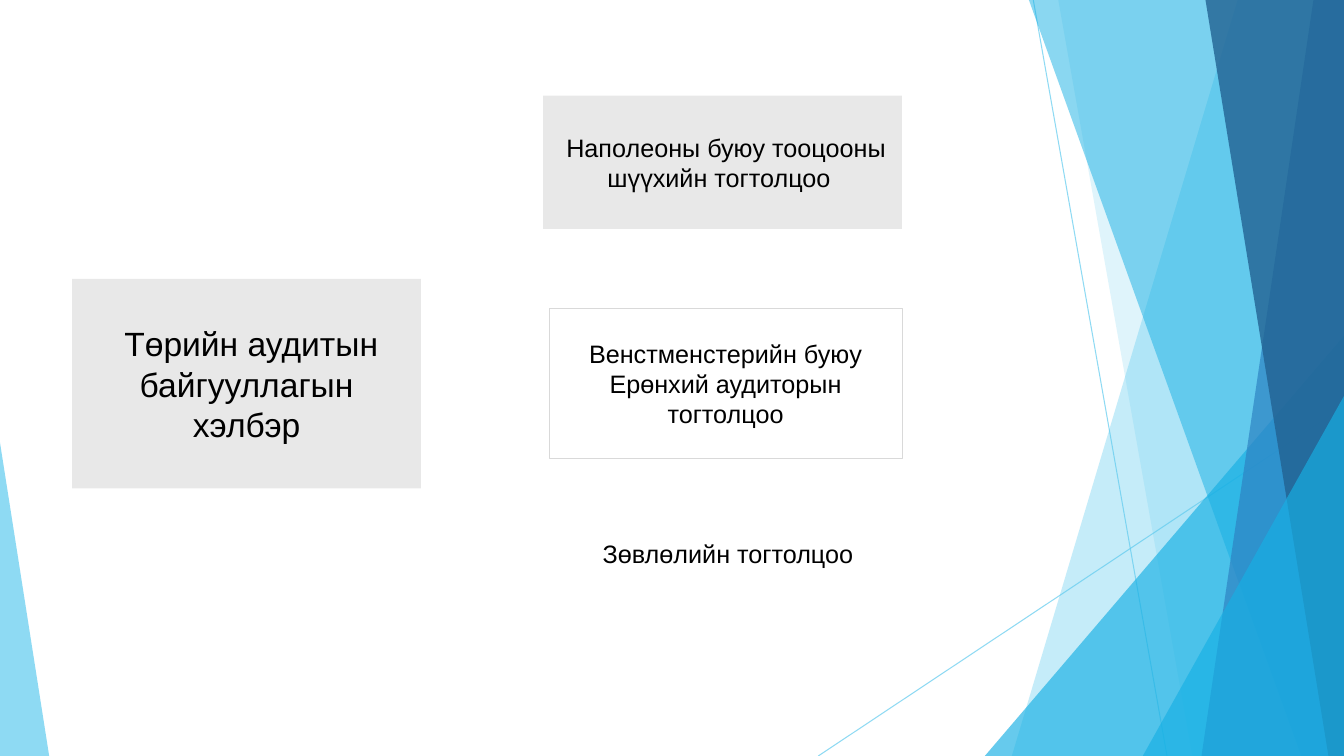
from lxml import etree
from pptx import Presentation
from pptx.dml.color import RGBColor
from pptx.enum import shapes, text
from pptx.oxml import ns
from pptx.util import Cm, Pt

SKY = RGBColor(0x5F, 0xCB, 0xEF)
CYAN = RGBColor(0x17, 0xB0, 0xE4)
BLUE = RGBColor(0x2E, 0x83, 0xC3)
NAVY = RGBColor(0x22, 0x62, 0x92)
GREY = RGBColor(0xD9, 0xD9, 0xD9)
WHITE = RGBColor(0xFF, 0xFF, 0xFF)
BLACK = RGBColor(0, 0, 0)
WIDTH, HEIGHT = 33.87, 19.05


def set_opacity(shape, percent):
    """Make the only solid colour of a shape or line partly transparent."""
    colour = shape._element.spPr.find(".//" + ns.qn("a:srgbClr"))
    etree.SubElement(colour, ns.qn("a:alpha")).set("val", str(percent * 1000))


def style_text(frame, words, size, align):
    frame.word_wrap = True
    para = frame.paragraphs[0]
    para.text = words
    para.alignment = align
    para.font.name = "Arial"
    para.font.size = Pt(size)
    para.font.color.rgb = BLACK


deck = Presentation()
deck.slide_width, deck.slide_height = Cm(WIDTH), Cm(HEIGHT)
page = deck.slides.add_slide(deck.slide_layouts[6])

# Thin lines behind the facets
for x1, y1, x2 in [(26.04, 0, 29.41), (WIDTH, 10.24, 20.62)]:
    line = page.shapes.add_connector(
        shapes.MSO_CONNECTOR.STRAIGHT, Cm(x1), Cm(y1), Cm(x2), Cm(HEIGHT))
    line.line.color.rgb = SKY
    line.line.width = Pt(0.75)
    set_opacity(line, 70)
    etree.SubElement(line._element.spPr, ns.qn("a:effectLst"))

# Facets: bands have a top and a bottom left corner and reach the right edge;
# triangles have left, top, right and apex position and stand on the bottom edge
facets = [
    ("band", (31.19, 25.5), SKY, 36),
    ("band", (26.67, 30.05), SKY, 20),
    ("triangle", (24.82, 8.46, WIDTH, 1), CYAN, 66),
    ("band", (25.93, 32.79), CYAN, 50),
    ("band", (33.1, 30.28), BLUE, 70),
    ("band", (30.38, 33.48), NAVY, 80),
    ("triangle", (28.8, 9.98, WIDTH, 1), CYAN, 66),
    ("triangle", (0, 11.15, 1.24, 0), SKY, 70),
]
for kind, place, colour, opacity in facets:
    if kind == "band":
        top_x, bottom_x = place
        outline = page.shapes.build_freeform(Cm(top_x), 0)
        outline.add_line_segments([
            (Cm(WIDTH), 0), (Cm(WIDTH), Cm(HEIGHT)), (Cm(bottom_x), Cm(HEIGHT))])
        facet = outline.convert_to_shape()
    else:
        left, top, right, apex = place
        facet = page.shapes.add_shape(
            shapes.MSO_SHAPE.ISOSCELES_TRIANGLE,
            Cm(left), Cm(top), Cm(right - left), Cm(HEIGHT - top))
        facet.adjustments[0] = apex
    facet.shadow.inherit = False
    facet.fill.solid()
    facet.fill.fore_color.rgb = colour
    facet.line.fill.background()
    set_opacity(facet, opacity)

# Boxes: the subject and two of its forms
boxes = [
    ((1.82, 7.03, 8.79, 5.28), " Төрийн аудитын байгууллагын хэлбэр", 24, True),
    ((13.69, 2.41, 9.04, 3.36), " Наполеоны буюу тооцооны шүүхийн тогтолцоо ", 18, True),
    ((13.84, 7.78, 8.89, 3.77), "Венстменстерийн буюу Ерөнхий аудиторын тогтолцоо", 18, False),
]
for place, words, size, shaded in boxes:
    box = page.shapes.add_shape(shapes.MSO_SHAPE.RECTANGLE, *map(Cm, place))
    box.shadow.inherit = False
    box.fill.solid()
    if shaded:
        box.fill.fore_color.rgb = GREY
        box.line.fill.background()
        set_opacity(box, 58)
    else:
        box.fill.fore_color.rgb = WHITE
        box.line.color.rgb = GREY
        box.line.width = Pt(0.5)
    box.text_frame.vertical_anchor = text.MSO_ANCHOR.MIDDLE
    style_text(box.text_frame, words, size, text.PP_ALIGN.CENTER)

# Third form, without a frame
advisory = page.shapes.add_textbox(Cm(13.69), Cm(12.29), Cm(8.89), Cm(3.76))
advisory.text_frame.margin_left = Cm(1.5)
advisory.text_frame.margin_top = Cm(1.27)
style_text(advisory.text_frame, "Зөвлөлийн тогтолцоо", 18, text.PP_ALIGN.LEFT)

deck.save("out.pptx")
